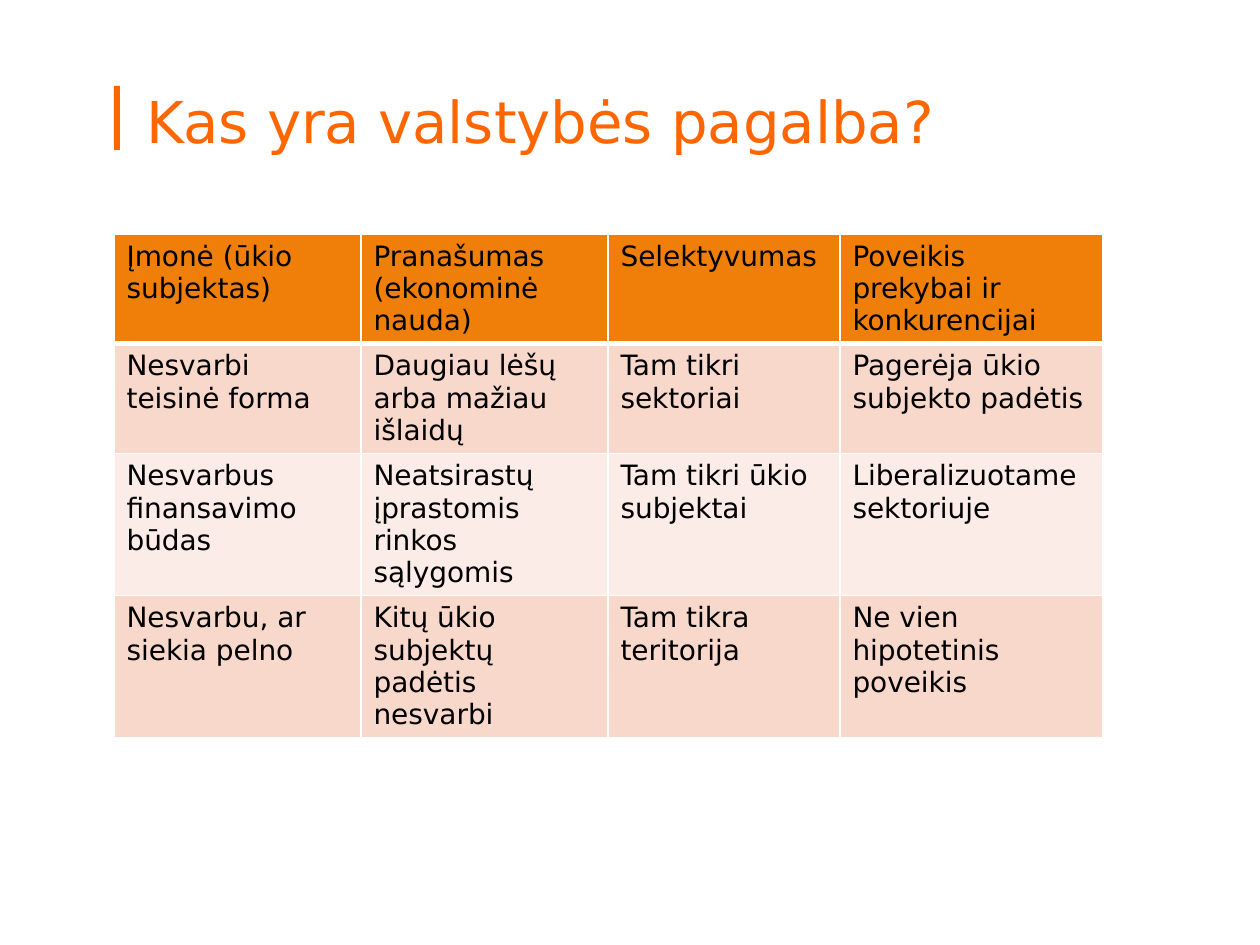
import pptx
import pptx.dml.color
import pptx.enum.shapes
import pptx.enum.text
import pptx.oxml.ns
import pptx.util
from lxml import etree

PX = 914400 // 126
FONT = "DejaVu Sans"
COLORS = {
    "accent": "FF6600",
    "header": "F07F09",
    "band_dark": "F9D8CC",
    "band_light": "FCECE7",
    "border": "FFFFFF",
    "text": "000000",
}
COLUMN_WIDTHS = [247, 247, 232, 263]
ROW_HEIGHTS = [109, 110, 142, 141]
ROWS = [
    ["Įmonė (ūkio subjektas)", "Pranašumas (ekonominė nauda)",
     "Selektyvumas", "Poveikis prekybai ir konkurencijai"],
    ["Nesvarbi teisinė forma", "Daugiau lėšų arba mažiau išlaidų",
     "Tam tikri sektoriai", "Pagerėja ūkio subjekto padėtis"],
    ["Nesvarbus finansavimo būdas", "Neatsirastų įprastomis rinkos sąlygomis",
     "Tam tikri ūkio subjektai", "Liberalizuotame sektoriuje"],
    ["Nesvarbu, ar siekia pelno", "Kitų ūkio subjektų padėtis nesvarbi",
     "Tam tikra teritorija", "Ne vien hipotetinis poveikis"],
]


def px(*lengths):
    return [pptx.util.Emu(n * PX) for n in lengths]


def rgb(name):
    return pptx.dml.color.RGBColor.from_string(COLORS[name])


def fill_solid(item, color):
    item.fill.solid()
    item.fill.fore_color.rgb = rgb(color)


def write(tf, text, size, color):
    tf.text = text
    p = tf.paragraphs[0]
    p.alignment = pptx.enum.text.PP_ALIGN.LEFT
    font = p.runs[0].font
    font.name = FONT
    font.size = pptx.util.Pt(size)
    font.color.rgb = rgb(color)


def add_title(s, text):
    sp = s.shapes.title
    sp.left, sp.top, sp.width, sp.height = px(134, 76, 992, 110)
    tf = sp.text_frame
    tf.word_wrap = True
    tf.auto_size = pptx.enum.text.MSO_AUTO_SIZE.NONE
    tf.vertical_anchor = pptx.enum.text.MSO_ANCHOR.TOP
    tf.margin_top = px(10)[0]
    write(tf, text, 33, "accent")


def add_bar(s):
    sp = s.shapes.add_shape(pptx.enum.shapes.MSO_SHAPE.RECTANGLE,
                            *px(114, 86, 6, 64))
    sp.shadow.inherit = False
    fill_solid(sp, "accent")
    sp.line.fill.background()


def set_borders(cell, widths):
    """Draw the cell's sides; widths maps L, R, T and B to points."""
    tc_pr = cell._tc.get_or_add_tcPr()
    for side, width in widths.items():
        ln = etree.SubElement(tc_pr, pptx.oxml.ns.qn(f"a:ln{side}"),
                              w=str(pptx.util.Pt(width)))
        fill = etree.SubElement(ln, pptx.oxml.ns.qn("a:solidFill"))
        etree.SubElement(fill, pptx.oxml.ns.qn("a:srgbClr"),
                         val=COLORS["border"])


def add_table(s, rows):
    frame = s.shapes.add_table(
        len(rows), len(rows[0]),
        *px(114, 234, sum(COLUMN_WIDTHS), sum(ROW_HEIGHTS)))
    table = frame.table
    for column, width in zip(table.columns, COLUMN_WIDTHS):
        column.width = px(width)[0]
    for row, height in zip(table.rows, ROW_HEIGHTS):
        row.height = px(height)[0]
    for i, texts in enumerate(rows):
        band = "header" if i == 0 else "band_dark" if i % 2 else "band_light"
        widths = {"L": 1, "R": 1, "T": 3 if i == 1 else 1,
                  "B": 3 if i == 0 else 1}
        for j, text in enumerate(texts):
            cell = table.cell(i, j)
            set_borders(cell, widths)
            fill_solid(cell, band)
            write(cell.text_frame, text, 16, "text")
            cell.text_frame.paragraphs[0].runs[0].font.bold = False


def main():
    prs = pptx.Presentation()
    prs.slide_width, prs.slide_height = px(1260, 945)
    s = prs.slides.add_slide(prs.slide_layouts[5])
    add_title(s, "Kas yra valstybės pagalba?")
    add_bar(s)
    add_table(s, ROWS)
    prs.save("out.pptx")


if __name__ == "__main__":
    main()
